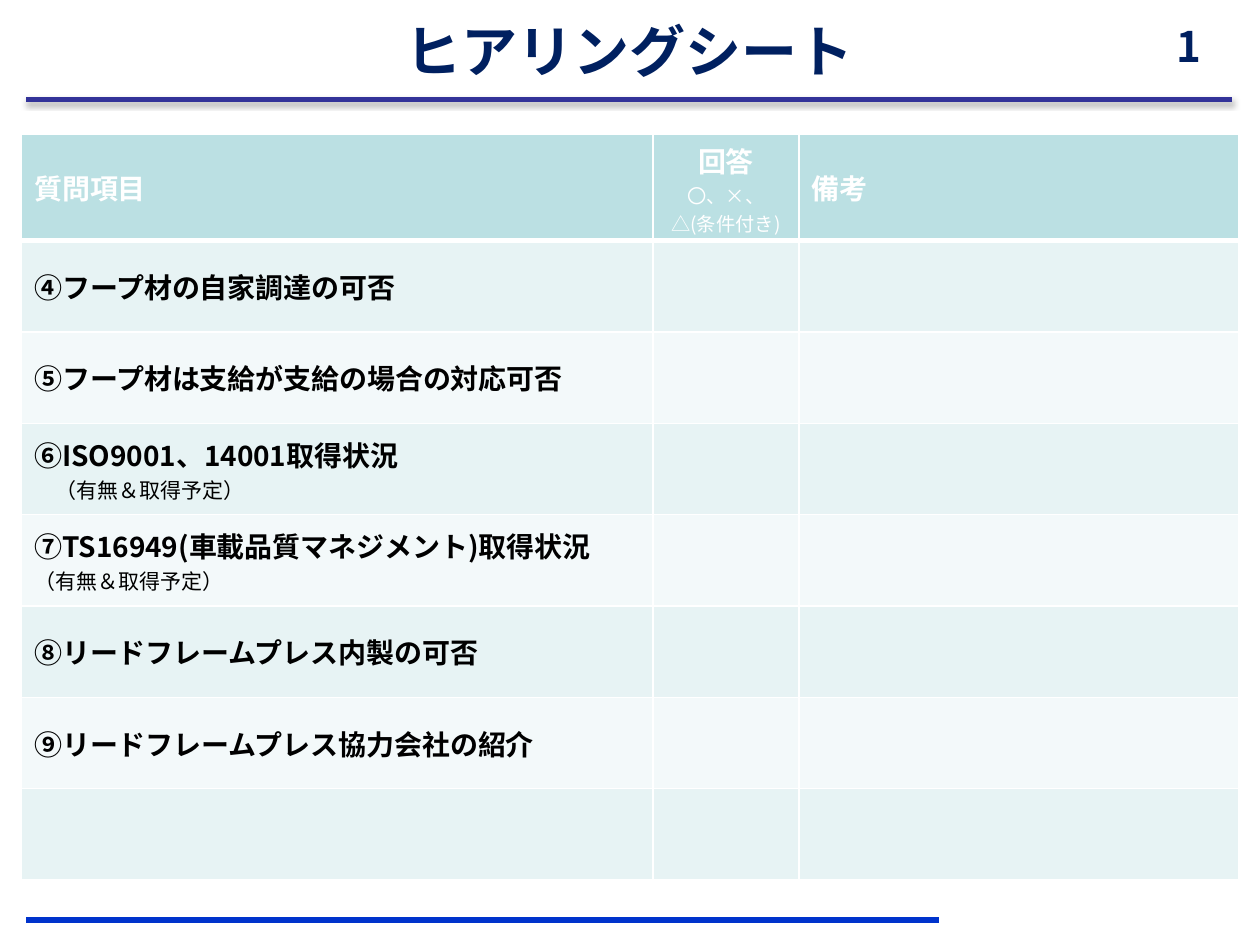
from lxml.etree import SubElement as Sub
from pptx import Presentation
from pptx.dml.color import RGBColor as RGB
from pptx.enum.shapes import MSO_CONNECTOR as Conn
from pptx.enum.text import MSO_ANCHOR as Anchor, PP_ALIGN as Align
from pptx.oxml import parse_xml
from pptx.oxml.ns import nsdecls, qn
from pptx.util import Pt

FONT = "Noto Sans CJK JP"
HEX = {"navy": "002060", "rule": "333399", "foot": "0033CC", "head": "BBE0E3",
       "odd": "E7F3F4", "even": "F3F9FA", "white": "FFFFFF", "black": "000000"}

TITLE = "ヒアリングシート"
NUMBER = "1"
# Each cell is a list of lines: the first is bold, the rest are small notes.
HEADS = [["質問項目"], ["回答", "〇、×、", "△(条件付き)"], ["備考"]]
ITEMS = [
    ["④フープ材の自家調達の可否"],
    ["⑤フープ材は支給が支給の場合の対応可否"],
    ["⑥ISO9001、14001取得状況", "\u3000（有無＆取得予定）"],
    ["⑦TS16949(車載品質マネジメント)取得状況", "（有無＆取得予定）"],
    ["⑧リードフレームプレス内製の可否"],
    ["⑨リードフレームプレス協力会社の紹介"],
    [],
]
COLS = [360.7, 83.5, 251.3]
HEAD_H, ROW_H = 61, 52.2
LEFT, TOP = 12.4, 76.6


def color(name):
    return RGB.from_string(HEX[name])


def write(frame, lines, size=16, note=12, ink="black", align=Align.LEFT):
    for i, line in enumerate(lines):
        para = frame.paragraphs[0] if i == 0 else frame.add_paragraph()
        para.alignment = align
        run = para.add_run()
        run.text = line
        font = run.font
        font.size = Pt(note if i else size)
        font.bold = i == 0
        font.name = FONT
        font.color.rgb = color(ink)
        Sub(font._element, qn("a:ea"), typeface=FONT)


def add_text(slide, text, x, y, w, h, inset=None, **style):
    frame = slide.shapes.add_textbox(Pt(x), Pt(y), Pt(w), Pt(h)).text_frame
    frame.word_wrap = True
    frame.vertical_anchor = Anchor.MIDDLE
    if inset is not None:
        frame.margin_left = frame.margin_right = Pt(inset)
        frame.margin_top = frame.margin_bottom = Pt(inset)
    write(frame, [text], ink="navy", align=Align.CENTER, **style)


def add_rule(slide, x1, x2, y, ink, width, shadow=False):
    rule = slide.shapes.add_connector(Conn.STRAIGHT, Pt(x1), Pt(y), Pt(x2), Pt(y))
    rule.line.color.rgb = color(ink)
    rule.line.width = Pt(width)
    effects = Sub(rule._element.spPr, qn("a:effectLst"))
    if shadow:
        effects.append(parse_xml(
            f'<a:outerShdw {nsdecls("a")} blurRad="{Pt(3.1)}" dist="{Pt(1.8)}" '
            'dir="5400000" rotWithShape="0"><a:srgbClr val="000000">'
            '<a:alpha val="35000"/></a:srgbClr></a:outerShdw>'))


def set_cell(cell, lines, fill, base=1, top=1, **style):
    """Fill a cell; base and top are the widths of its lower and upper borders."""
    cell.vertical_anchor = Anchor.MIDDLE
    cell.fill.solid()
    cell.fill.fore_color.rgb = color(fill)
    props = cell._tc.get_or_add_tcPr()
    for i, (side, width) in enumerate(zip("LRTB", (1, 1, top, base))):
        props.insert(i, parse_xml(
            f'<a:ln{side} {nsdecls("a")} w="{Pt(width)}"><a:solidFill>'
            f'<a:srgbClr val="{HEX["white"]}"/></a:solidFill></a:ln{side}>'))
    write(cell.text_frame, lines, **style)


def add_sheet(slide):
    height = HEAD_H + ROW_H * len(ITEMS)
    table = slide.shapes.add_table(len(ITEMS) + 1, len(COLS), Pt(LEFT), Pt(TOP),
                                   Pt(sum(COLS)), Pt(height)).table
    for col, width in zip(table.columns, COLS):
        col.width = Pt(width)
    for i, row in enumerate(table.rows):
        row.height = Pt(ROW_H if i else HEAD_H)
    for c, lines in enumerate(HEADS):
        set_cell(table.cell(0, c), lines, "head", base=3, note=11, ink="white",
                 align=Align.CENTER if c == 1 else Align.LEFT)
    for r, item in enumerate(ITEMS, 1):
        for c in range(len(COLS)):
            set_cell(table.cell(r, c), [] if c else item,
                     "odd" if r % 2 else "even", top=3 if r == 1 else 1)


def main():
    deck = Presentation()
    deck.slide_width, deck.slide_height = Pt(720), Pt(540)
    slide = deck.slides.add_slide(deck.slide_layouts[6])
    add_text(slide, NUMBER, 655, 13, 49, 26, inset=0, size=24)
    add_rule(slide, 15, 536.4, 525.6, "foot", 3.5)
    add_rule(slide, 15, 704, 56.9, "rule", 3, shadow=True)
    add_text(slide, TITLE, 120.2, 7.2, 479.5, 43.2, size=32)
    add_sheet(slide)
    deck.save("out.pptx")


if __name__ == "__main__":
    main()
